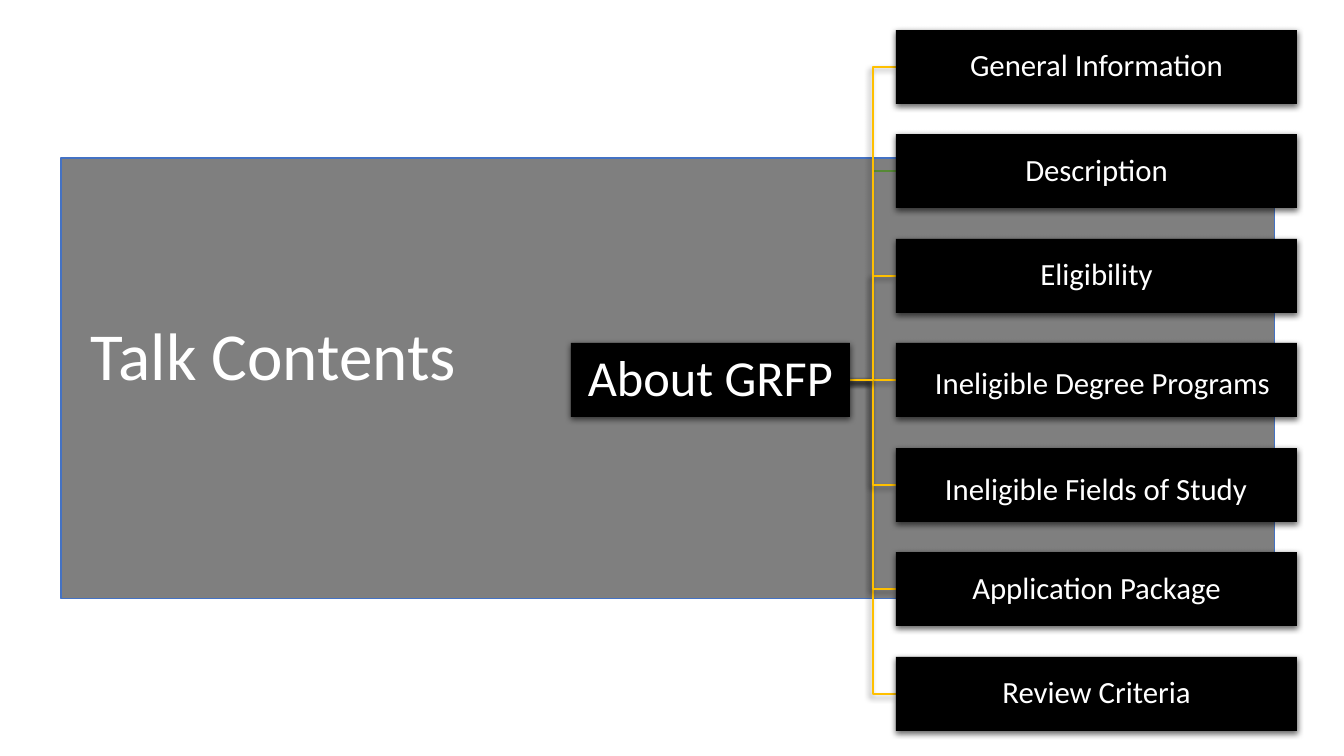
from lxml import etree
from pptx import Presentation
from pptx.dml.color import RGBColor
from pptx.enum.shapes import MSO_CONNECTOR, MSO_SHAPE
from pptx.enum.text import MSO_ANCHOR, PP_ALIGN
from pptx.oxml import parse_xml
from pptx.oxml.ns import nsdecls, qn
from pptx.util import Pt

PX = 914400 / 100.8  # EMU in one px
color = RGBColor.from_string


def px(*lengths):
    return [round(length * PX) for length in lengths]


def add_shadow(shape, blur, distance, degrees, opacity):
    """Give the shape a black outer shadow; lengths in points."""
    shape._element.spPr.append(parse_xml(
        f'<a:effectLst {nsdecls("a")}><a:outerShdw blurRad="{Pt(blur)}" dist="{Pt(distance)}" '
        f'dir="{degrees * 60000}" algn="ctr" rotWithShape="0"><a:srgbClr val="000000">'
        f'<a:alpha val="{opacity * 1000}"/></a:srgbClr></a:outerShdw></a:effectLst>'))


presentation = Presentation()
presentation.slide_width, presentation.slide_height = px(1344, 756)
slide = presentation.slides.add_slide(presentation.slide_layouts[6])
shapes = slide.shapes

# Half-transparent title panel
panel = shapes.add_shape(MSO_SHAPE.RECTANGLE, *px(61, 158, 1214, 441))
panel.shadow.inherit = False
panel.fill.solid()
panel.fill.fore_color.rgb = color("000000")
panel_color = panel._element.spPr.find(qn("a:solidFill"))[0]
etree.SubElement(panel_color, qn("a:alpha")).set("val", "50000")
panel.line.color.rgb = color("4472C4")
panel.line.width = Pt(0.75)
frame = panel.text_frame
frame.word_wrap = True
frame.vertical_anchor = MSO_ANCHOR.MIDDLE
frame.margin_left, frame.margin_top, frame.margin_right, frame.margin_bottom = px(30, 20, 30, 59)
title = frame.paragraphs[0]
title.text = "Talk Contents"
title.alignment = PP_ALIGN.LEFT
title.line_spacing = 0.9
title.font.name = "Calibri"
title.font.size = Pt(48)
title.font.color.rgb = color("FFFFFF")

# Topics, with the text box of each label that sits off centre
topics = [
    ("General Information", None),
    ("Description", None),
    ("Eligibility", None),
    ("Ineligible Degree Programs", (925, 359, 359, 47)),
    ("Ineligible Fields of Study", (935, 465, 324, 47)),
    ("Application Package", None),
    ("Review Criteria", None),
]
box_height = 74
topic_left, topic_width = 896, 401
topic_tops = [30 + row * 209 // 2 for row in range(len(topics))]
hub_left, hub_width = 571, 279
hub_right, hub_top = hub_left + hub_width, topic_tops[3]
hub_middle = hub_top + box_height // 2
elbow = (hub_right + topic_left) // 2

# Branches from the hub to each topic, lowest first
for row in reversed(range(len(topics))):
    middle = topic_tops[row] + box_height // 2
    is_plain = topics[row][0] == "Description"
    if middle == hub_middle:
        branch = shapes.add_connector(
            MSO_CONNECTOR.STRAIGHT, *px(hub_right, middle, topic_left, middle))
    else:
        builder = shapes.build_freeform(hub_right, hub_middle, scale=PX)
        builder.add_line_segments(
            [(elbow, hub_middle), (elbow, middle), (topic_left, middle)], close=False)
        branch = builder.convert_to_shape()
        branch.fill.background()
    branch.line.color.rgb = color("568935" if is_plain else "FFC000")
    branch.line.width = Pt(1 if is_plain else 1.5)
    if is_plain:
        branch.shadow.inherit = False
    else:
        add_shadow(branch, 4, 3, 135, 40)

# Hub and topic boxes
boxes = [("About GRFP", 36, hub_left, hub_top, hub_width, None)]
for (label, label_box), top in zip(topics, topic_tops):
    boxes.append((label, 22, topic_left, top, topic_width, label_box))

for label, size, left, top, width, label_box in boxes:
    box = shapes.add_shape(MSO_SHAPE.RECTANGLE, *px(left, top, width, box_height))
    box.fill.solid()
    box.fill.fore_color.rgb = color("000000")
    box.line.fill.background()
    add_shadow(box, 4.5, 1.5, 90, 62)
    if label_box:
        frame = shapes.add_textbox(*px(*label_box)).text_frame
    else:
        frame = box.text_frame
        frame.vertical_anchor = MSO_ANCHOR.MIDDLE
        frame.margin_left, frame.margin_top, frame.margin_right, frame.margin_bottom = px(2, 2, 2, 2)
    frame.word_wrap = True
    paragraph = frame.paragraphs[0]
    paragraph.text = label
    paragraph.alignment = PP_ALIGN.LEFT if label_box else PP_ALIGN.CENTER
    paragraph.line_spacing = 1.0 if label_box else 0.9
    paragraph.font.name = "Calibri"
    paragraph.font.size = Pt(size)
    paragraph.font.color.rgb = color("FFFFFF")

presentation.save("out.pptx")
